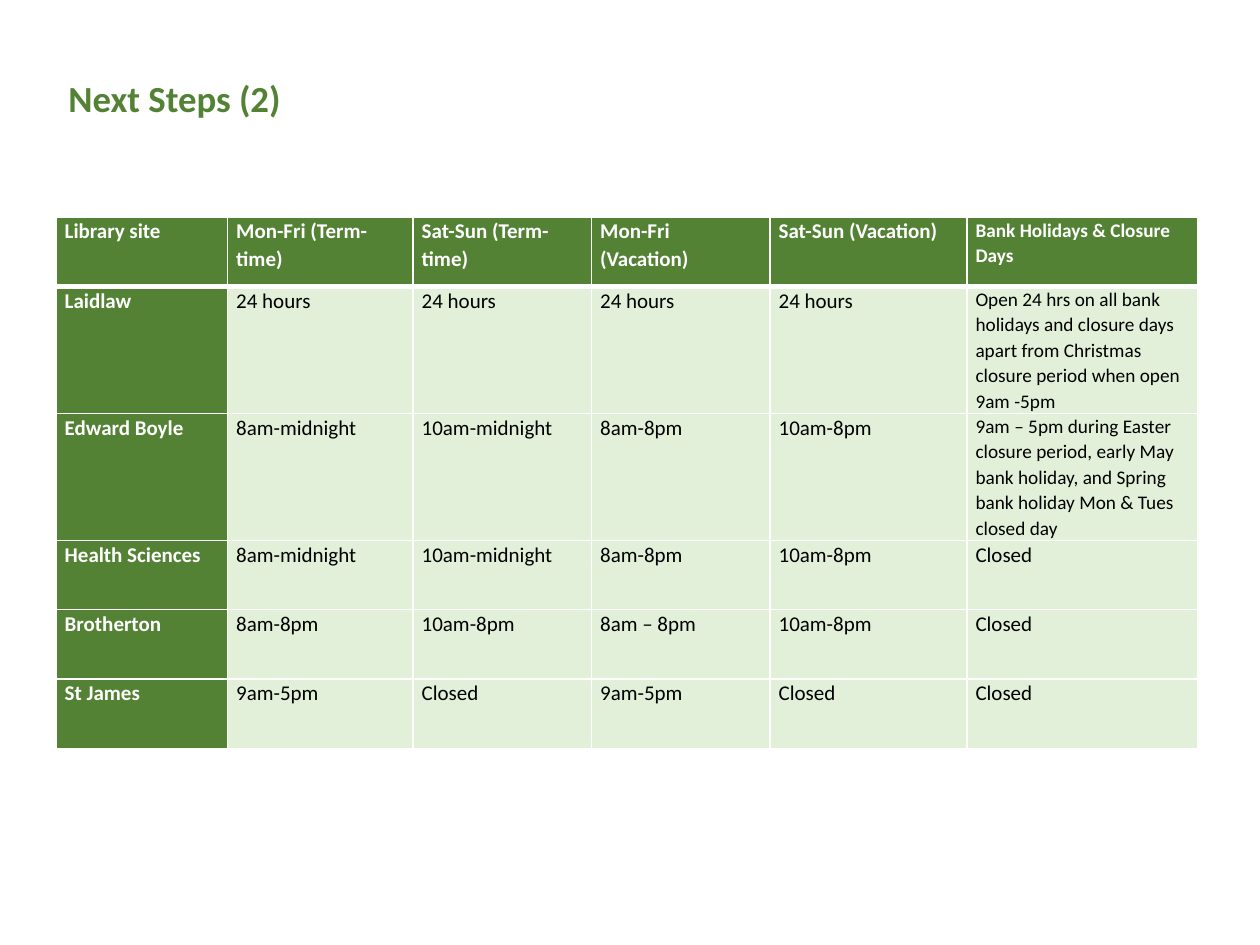
from lxml import etree
from pptx import Presentation
from pptx import util as u
from pptx.dml.color import RGBColor
from pptx.enum import text
from pptx.oxml.ns import qn

COLORS = {"green": "548235", "pale": "E2F0D9", "white": "FFFFFF", "black": "000000"}
TITLE = "Next Steps (2)"
OPENING_HOURS = [
    ("Library site", "Mon-Fri (Term-time)", "Sat-Sun (Term-time)",
     "Mon-Fri (Vacation)", "Sat-Sun (Vacation)", "Bank Holidays & Closure Days"),
    ("Laidlaw", "24 hours", "24 hours", "24 hours", "24 hours",
     "Open 24 hrs on all bank holidays and closure days apart from "
     "Christmas closure period when open 9am -5pm"),
    ("Edward Boyle", "8am-midnight", "10am-midnight", "8am-8pm", "10am-8pm",
     "9am – 5pm during Easter closure period, early May bank holiday, "
     "and Spring bank holiday Mon & Tues closed day"),
    ("Health Sciences", "8am-midnight", "10am-midnight", "8am-8pm", "10am-8pm", "Closed"),
    ("Brotherton", "8am-8pm", "10am-8pm", "8am – 8pm", "10am-8pm", "Closed"),
    ("St James", "9am-5pm", "Closed", "9am-5pm", "Closed", "Closed"),
]
COLUMN_WIDTHS = [98, 106, 102, 102, 112.5, 132]
SHORT_ROW, TALL_ROW = 39.6, 72.6
ROW_HEIGHTS = [SHORT_ROW, TALL_ROW, TALL_ROW, SHORT_ROW, SHORT_ROW, SHORT_ROW]
LEFT, TITLE_TOP, HOURS_TOP = 32, 39.6, 124
LONG_TEXT = 20


def write(frame, words, size=12, color="black", bold=False, spacing=1.0):
    frame.word_wrap = True
    paragraph = frame.paragraphs[0]
    paragraph.alignment = text.PP_ALIGN.LEFT
    paragraph.line_spacing = spacing
    run = paragraph.add_run()
    run.text = words
    run.font.name = "Calibri"
    run.font.size = u.Pt(size)
    run.font.bold = bold
    run.font.color.rgb = RGBColor.from_string(COLORS[color])


def add_borders(cell, **widths):
    properties = cell._tc.get_or_add_tcPr()
    for position, (side, width) in enumerate(widths.items()):
        border = etree.Element(qn(f"a:ln{side}"), w=str(u.Pt(width)))
        fill = etree.SubElement(border, qn("a:solidFill"))
        etree.SubElement(fill, qn("a:srgbClr"), val=COLORS["white"])
        properties.insert(position, border)


deck = Presentation()
deck.slide_width, deck.slide_height = u.Pt(720), u.Pt(540)
slide = deck.slides.add_slide(deck.slide_layouts[6])

title = slide.shapes.add_textbox(u.Pt(LEFT), u.Pt(TITLE_TOP), u.Pt(458), u.Pt(65.5))
write(title.text_frame, TITLE, size=21, color="green", bold=True)

hours = slide.shapes.add_table(
    len(ROW_HEIGHTS), len(COLUMN_WIDTHS), u.Pt(LEFT), u.Pt(HOURS_TOP),
    u.Pt(sum(COLUMN_WIDTHS)), u.Pt(sum(ROW_HEIGHTS))).table
for column, width in zip(hours.columns, COLUMN_WIDTHS):
    column.width = u.Pt(width)
for row, height in zip(hours.rows, ROW_HEIGHTS):
    row.height = u.Pt(height)

for r, entries in enumerate(OPENING_HOURS):
    for c, entry in enumerate(entries):
        cell = hours.cell(r, c)
        heading = r == 0 or c == 0
        cell.margin_left = cell.margin_right = u.Pt(5)
        cell.margin_top = cell.margin_bottom = 0
        cell.fill.solid()
        cell.fill.fore_color.rgb = RGBColor.from_string(COLORS["green" if heading else "pale"])
        add_borders(cell, L=1, R=1, T=3 if r == 1 else 1, B=3 if r == 0 else 1)
        write(cell.text_frame, entry, size=11 if len(entry) > LONG_TEXT else 12,
              color="white" if heading else "black", bold=heading, spacing=1.07)

deck.save("out.pptx")
